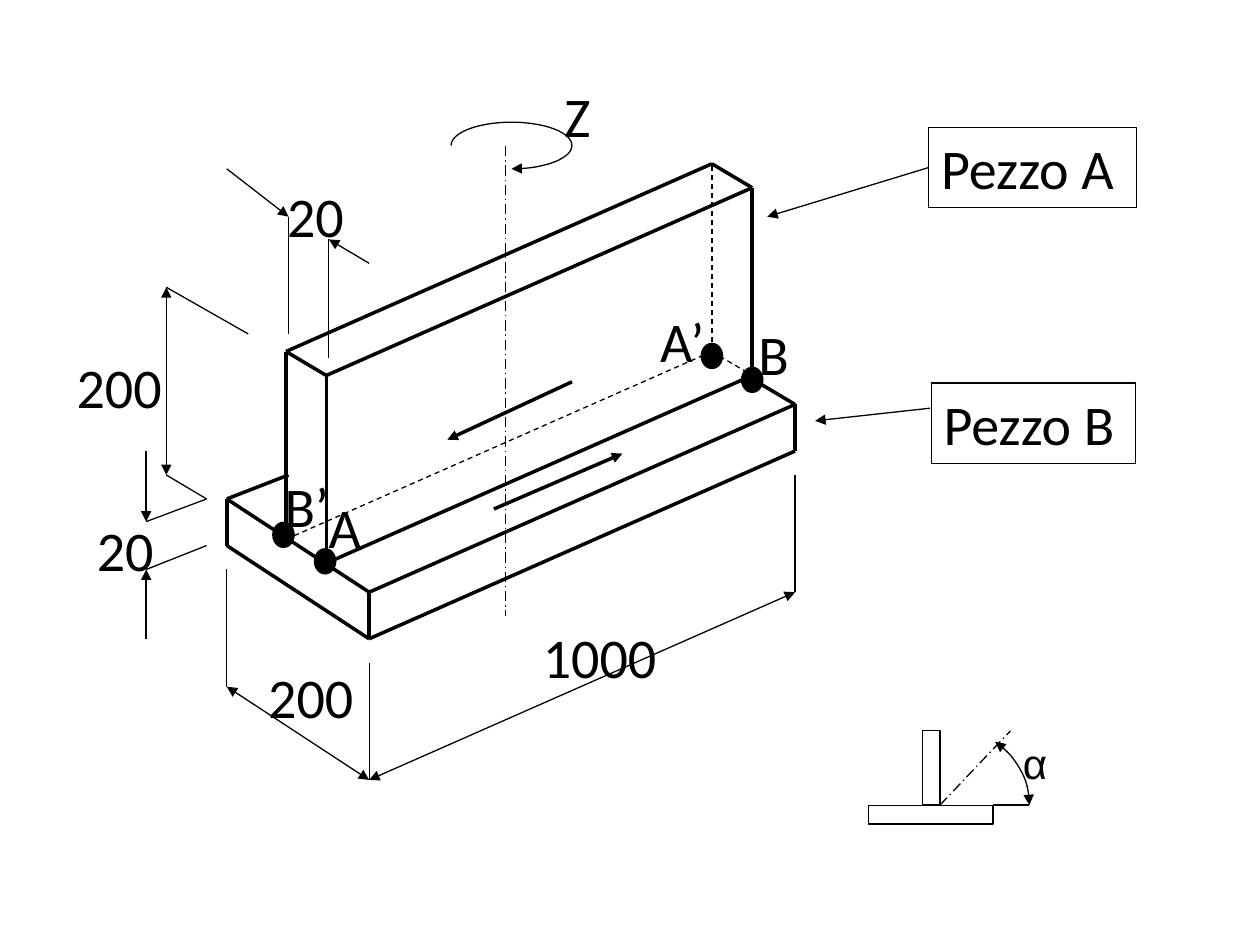
from lxml import etree
from pptx import Presentation
from pptx.dml.color import RGBColor
from pptx.enum.dml import MSO_LINE
from pptx.enum.shapes import MSO_CONNECTOR, MSO_SHAPE
from pptx.enum.text import MSO_ANCHOR, MSO_AUTO_SIZE, PP_ALIGN
from pptx.oxml.ns import qn
from pptx.util import Pt

PX = 9144  # EMU per px, 100 px to the inch
BLACK = RGBColor(0, 0, 0)
WHITE = RGBColor(255, 255, 255)
THIN, THICK = 0.75, 2
DASH, AXIS = MSO_LINE.DASH, MSO_LINE.LONG_DASH_DOT

prs = Presentation()
prs.slide_width, prs.slide_height = 1000 * PX, 750 * PX
s = prs.slides.add_slide(prs.slide_layouts[6])
joint = s.shapes.add_group_shape().shapes
section = s.shapes.add_group_shape().shapes


def style_line(sp, width=THIN, dash=None, ends=()):
    sp.line.color.rgb = BLACK
    sp.line.width = Pt(width)
    if dash:
        sp.line.dash_style = dash
    ln = sp.line._get_or_add_ln()
    for end in ends:
        etree.SubElement(ln, qn("a:" + end), type="triangle")


def add_line(shapes, start, end, width=THIN, dash=None, ends=()):
    c = shapes.add_connector(MSO_CONNECTOR.STRAIGHT, *[v * PX for v in start + end])
    style_line(c, width, dash, ends)
    etree.SubElement(c._element.spPr, qn("a:effectLst"))
    return c


HEAD, TAIL = ("headEnd",), ("tailEnd",)
BOTH = HEAD + TAIL

# Base plate (piece B) and upright plate (piece A): visible edges
for start, end in [
    ((180, 396), (293, 470)), ((293, 470), (631, 321)),
    ((180, 433), (293, 507)), ((293, 507), (631, 358)),
    ((180, 396), (180, 433)), ((293, 470), (293, 507)), ((631, 321), (631, 358)),
    ((227, 428), (227, 279)), ((227, 279), (259, 298)), ((259, 447), (259, 298)),
    ((565, 130), (597, 149)), ((597, 298), (597, 149)),
    ((259, 447), (597, 298)), ((259, 298), (597, 149)), ((227, 279), (565, 130)),
    ((631, 321), (599, 302)), ((180, 396), (229, 377)),
]:
    add_line(joint, start, end, THICK)

# Hidden edges, all meeting at the rear corner
for corner in [(597, 298), (565, 130), (227, 428)]:
    add_line(joint, (565, 279), corner, dash=DASH)

# Extension lines
for start, end in [
    ((293, 526), (293, 619)), ((180, 452), (180, 545)), ((631, 377), (631, 470)),
    ((164, 396), (116, 414)), ((164, 433), (116, 452)),
    ((164, 396), (132, 377)), ((197, 265), (132, 228)),
    ((229, 265), (229, 172)), ((261, 284), (261, 190)),
]:
    add_line(joint, start, end)

# Dimension lines
for start, end, ends in [
    ((180, 545), (293, 619), BOTH), ((293, 619), (631, 470), BOTH),
    ((132, 377), (132, 228), BOTH),
    ((116, 414), (116, 358), HEAD), ((116, 452), (116, 507), HEAD),
    ((229, 172), (180, 134), HEAD), ((261, 190), (293, 209), HEAD),
]:
    add_line(joint, start, end, ends=ends)

# Z axis and welding directions
add_line(joint, (401, 116), (401, 489), dash=AXIS)
add_line(joint, (392, 404), (494, 360), THICK, ends=TAIL)
add_line(joint, (454, 303), (355, 349), THICK, ends=TAIL)

# Weld end points
for x, y in [(249, 435), (216, 414), (588, 291), (556, 272)]:
    sp = joint.add_shape(MSO_SHAPE.OVAL, x * PX, y * PX, 18 * PX, 21 * PX)
    sp.shadow.inherit = False
    sp.fill.solid()
    sp.fill.fore_color.rgb = BLACK
    sp.line.fill.background()

# Rotation about Z and angle alpha: box, start and end in degrees, arrowheads
for shapes, box, angles, ends in [
    (joint, (358, 97, 96, 37), (180, 90), TAIL),
    (section, (675, 575, 142, 128), (311, 0), BOTH),
]:
    sp = shapes.add_shape(MSO_SHAPE.ARC, *[v * PX for v in box])
    sp.shadow.inherit = False
    for i, angle in enumerate(angles):
        sp.adjustments[i] = angle * 0.6  # 60000 units per degree over 100000
    sp.fill.background()
    style_line(sp, ends=ends)

# Small cross-section: base, upright, bisector and reference line
plates = []
for shapes, box in [
    (section, (689, 639, 99, 15)), (section, (732, 580, 14, 59)),
    (joint, (737, 101, 165, 64)), (joint, (739, 304, 162, 64)),
]:
    sp = shapes.add_shape(MSO_SHAPE.RECTANGLE, *[v * PX for v in box])
    sp.shadow.inherit = False
    sp.fill.solid()
    sp.fill.fore_color.rgb = WHITE
    style_line(sp)
    plates.append(sp)
add_line(section, (746, 639), (802, 580), dash=AXIS)
add_line(section, (788, 639), (817, 639))

# Leaders from the piece names
piece_a, piece_b = plates[2:]
leader = add_line(joint, (737, 133), (609, 172), ends=TAIL)
leader.begin_connect(piece_a, 1)
add_line(joint, (738, 324), (647, 334), ends=TAIL)

# Labels: piece names, dimensions and points
labels = [(piece_a, "Pezzo A", 32, "Calibri"), (piece_b, "Pezzo B", 32, "Calibri")]
for text, x, y in [
    ("A", 251, 386), ("B’", 216, 369), ("A’", 514, 238), ("B", 592, 249),
    ("Z", 438, 60), ("20", 218, 139), ("200", 51, 275), ("20", 67, 404),
    ("200", 203, 521), ("1000", 421, 489),
]:
    sp = joint.add_textbox(x * PX, y * PX, 145 * PX, 74 * PX)
    labels.append((sp, text, 32, "Calibri"))
sp = section.add_textbox(802 * PX, 580 * PX, 52 * PX, 59 * PX)
labels.append((sp, "α", 24, "Arial"))

for sp, text, size, font in labels:
    tf = sp.text_frame
    tf.text = text
    tf.word_wrap = True
    tf.vertical_anchor = MSO_ANCHOR.TOP
    if sp in (piece_a, piece_b):
        tf.auto_size = MSO_AUTO_SIZE.SHAPE_TO_FIT_TEXT
    p = tf.paragraphs[0]
    p.alignment = PP_ALIGN.LEFT
    p.space_after = Pt(10)
    r = p.runs[0]
    r.font.size = Pt(size)
    r.font.name = font
    r.font.color.rgb = BLACK

prs.save("out.pptx")
